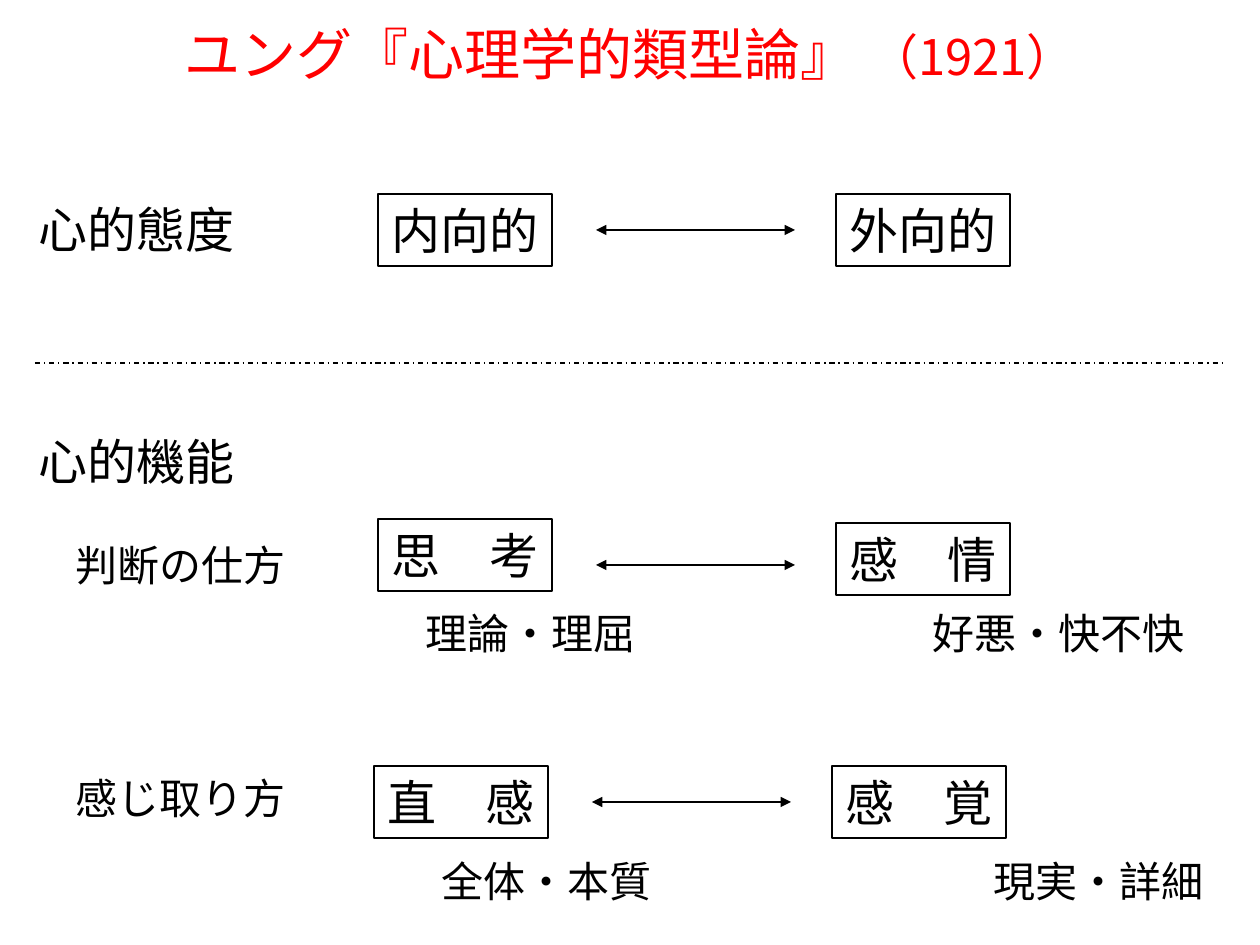
from lxml.etree import SubElement
from pptx import Presentation
from pptx.dml.color import RGBColor
from pptx.enum.dml import MSO_LINE_DASH_STYLE as Dash
from pptx.enum.shapes import MSO_CONNECTOR as Connector, MSO_SHAPE as Shape
from pptx.enum.text import MSO_ANCHOR as Anchor, MSO_AUTO_SIZE as AutoSize, PP_ALIGN as Align
from pptx.oxml.ns import qn
from pptx.util import Emu, Pt

PX_PER_INCH = 126
FONT = "Noto Sans CJK JP"
COLORS = {"title": "FF0000", "ink": "000000"}
BOX_WIDTH, BOX_HEIGHT = 174, 72
BOX_GAP = 458
ARROW_OFFSET, ARROW_LENGTH = 218, 199


def px(length):
    return Emu(round(length * 914400 / PX_PER_INCH))


def color(name):
    return RGBColor.from_string(COLORS[name])


def format_paragraph(paragraph, size, color_name="ink", align=Align.LEFT):
    paragraph.alignment = align
    font = paragraph.font
    font.size = Pt(size)
    font.name = FONT
    font.color.rgb = color(color_name)
    properties = paragraph._p.pPr.find(qn("a:defRPr"))
    SubElement(properties, qn("a:ea")).set("typeface", FONT)


def add_title(slide, text, year):
    title = slide.shapes.title
    title.left, title.top, title.width, title.height = map(px, (63, 13, 1134, 80))
    frame = title.text_frame
    frame.vertical_anchor = Anchor.MIDDLE
    frame.auto_size = AutoSize.NONE
    paragraph = frame.paragraphs[0]
    format_paragraph(paragraph, 32, "title", Align.CENTER)
    paragraph.add_run().text = text
    year_run = paragraph.add_run()
    year_run.text = year
    year_run.font.size = Pt(28)


def add_label(slide, text, left, top, size):
    width = round(len(text) * size * PX_PER_INCH / 72) + 25
    height = BOX_HEIGHT if size == 28 else 63
    label = slide.shapes.add_textbox(px(left), px(top), px(width), px(height))
    frame = label.text_frame
    frame.word_wrap = False
    frame.auto_size = AutoSize.SHAPE_TO_FIT_TEXT
    frame.text = text
    format_paragraph(frame.paragraphs[0], size)


def add_box(slide, text, left, top):
    box = slide.shapes.add_shape(
        Shape.RECTANGLE, px(left), px(top), px(BOX_WIDTH), px(BOX_HEIGHT))
    box.shadow.inherit = False
    box.fill.background()
    box.line.color.rgb = color("ink")
    box.line.width = Pt(0.75)
    frame = box.text_frame
    frame.word_wrap = False
    frame.auto_size = AutoSize.SHAPE_TO_FIT_TEXT
    frame.text = text
    format_paragraph(frame.paragraphs[0], 28, align=Align.CENTER)


def add_line(slide, left, right, y, width):
    line = slide.shapes.add_connector(Connector.STRAIGHT, px(left), px(y), px(right), px(y))
    line.line.color.rgb = color("ink")
    line.line.width = Pt(width)
    SubElement(line._element.spPr, qn("a:effectLst"))
    return line


def add_double_arrow(slide, left, y):
    arrow = add_line(slide, left, left + ARROW_LENGTH, y, 1.5)
    outline = arrow.line._get_or_add_ln()
    for end in ("a:headEnd", "a:tailEnd"):
        SubElement(outline, qn(end)).set("type", "triangle")


def add_opposites(slide, left, words, tops, arrow_y):
    for index, (word, top) in enumerate(zip(words, tops)):
        add_box(slide, word, left + index * BOX_GAP, top)
    add_double_arrow(slide, left + ARROW_OFFSET, arrow_y)


def main():
    presentation = Presentation()
    presentation.slide_width, presentation.slide_height = px(1260), px(945)
    slide = presentation.slides.add_slide(presentation.slide_layouts[5])

    add_title(slide, "ユング『心理学的類型論』 ", "（1921）")

    for left, words, tops, arrow_y in (
        (378, ("内向的", "外向的"), (194, 194), 230),
        (378, ("思　考", "感　情"), (519, 523), 565),
        (374, ("直　感", "感　覚"), (766, 766), 802),
    ):
        add_opposites(slide, left, words, tops, arrow_y)

    divider = add_line(slide, 35, 1225, 363, 0.75)
    divider.line.dash_style = Dash.DASH_DOT

    for text, left, top, size in (
        ("心的態度", 26, 193, 28),
        ("心的機能", 26, 425, 28),
        ("判断の仕方", 63, 533, 24),
        ("感じ取り方", 63, 766, 24),
        ("理論・理屈", 413, 601, 24),
        ("好悪・快不快", 920, 601, 24),
        ("全体・本質", 429, 849, 24),
        ("現実・詳細", 981, 849, 24),
    ):
        add_label(slide, text, left, top, size)

    presentation.save("out.pptx")


if __name__ == "__main__":
    main()
